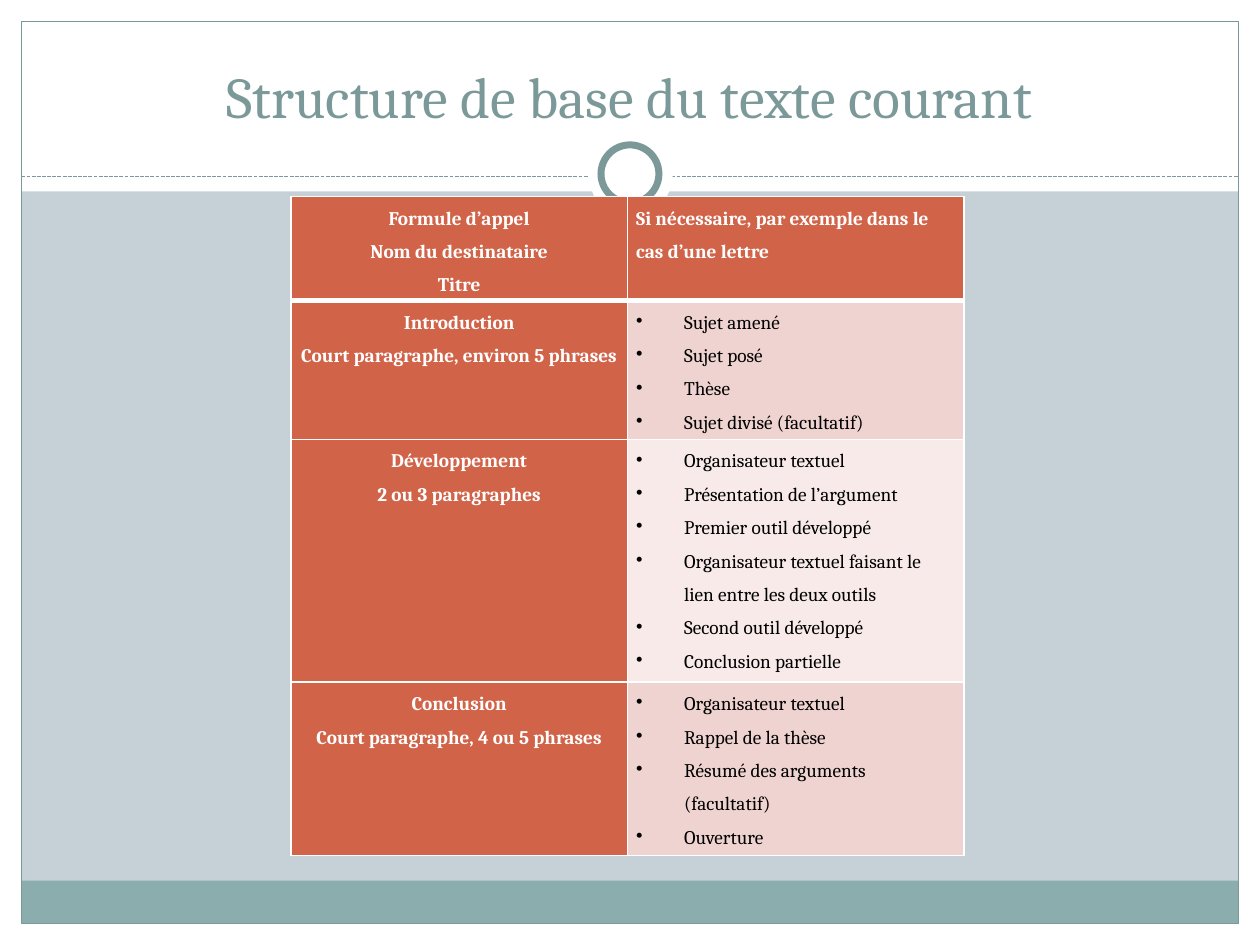
from lxml.etree import SubElement
from pptx import Presentation
from pptx.dml.color import RGBColor
from pptx.enum.dml import MSO_LINE
from pptx.enum.shapes import MSO_CONNECTOR, MSO_SHAPE
from pptx.enum.text import MSO_ANCHOR, PP_ALIGN
from pptx.oxml.ns import qn
from pptx.util import Inches, Pt

TITLE = "Structure de base du texte courant"
ROWS = [
    (0.79, ["Formule d’appel", "Nom du destinataire", "Titre"],
     ["Si nécessaire, par exemple dans le cas d’une lettre"]),
    (1.05, ["Introduction", "Court paragraphe, environ 5 phrases"],
     ["Sujet amené", "Sujet posé", "Thèse", "Sujet divisé (facultatif)"]),
    (1.84, ["Développement", "2 ou 3 paragraphes"],
     ["Organisateur textuel", "Présentation de l’argument", "Premier outil développé",
      "Organisateur textuel faisant le lien entre les deux outils",
      "Second outil développé", "Conclusion partielle"]),
    (1.32, ["Conclusion", "Court paragraphe, 4 ou 5 phrases"],
     ["Organisateur textuel", "Rappel de la thèse",
      "Résumé des arguments (facultatif)", "Ouverture"]),
]
WHITE, TEAL, BAR, BACK = "FFFFFF", "7C999A", "8CADAE", "C5D1D7"
ORANGE, BANDS = "D16349", ("F7EAE9", "EED3D0")
W, H, M = 10, 7.5, 0.17
COL_W = 2.67
PANELS = [
    (MSO_SHAPE.RECTANGLE, 0, H - M, W, M, WHITE, None, 0),
    (MSO_SHAPE.RECTANGLE, 0, 0, W, 1.52, WHITE, None, 0),
    (MSO_SHAPE.RECTANGLE, 0, 0, M, H, WHITE, None, 0),
    (MSO_SHAPE.RECTANGLE, W - M, 0, M, H, WHITE, None, 0),
    (MSO_SHAPE.RECTANGLE, M, 6.99, W - 2 * M, 0.34, BAR, None, 0),
    (MSO_SHAPE.RECTANGLE, M, M, W - 2 * M, H - 2 * M, None, TEAL, 0.75),
]
RINGS = [
    (MSO_SHAPE.OVAL, 4.67, 1.05, 0.67, 0.67, WHITE, None, 0),
    (MSO_SHAPE.OVAL, 4.77, 1.15, 0.46, 0.46, WHITE, TEAL, 4),
]


def rgb(color):
    return RGBColor.from_string(color)


def add_panel(shapes, kind, x, y, w, h, fill, line, width):
    sp = shapes.add_shape(kind, Inches(x), Inches(y), Inches(w), Inches(h))
    sp.shadow.inherit = False
    if fill:
        sp.fill.solid()
        sp.fill.fore_color.rgb = rgb(fill)
    else:
        sp.fill.background()
    if line:
        sp.line.color.rgb = rgb(line)
        sp.line.width = Pt(width)
    else:
        sp.line.fill.background()


def write(tf, lines, size=11, color=WHITE, bold=False, align=PP_ALIGN.CENTER,
          spacing=None, bullet=False):
    tf.word_wrap = True
    for i, text in enumerate(lines):
        p = tf.paragraphs[0] if i == 0 else tf.add_paragraph()
        p.alignment = align
        if spacing:
            p.line_spacing = spacing
        if bullet:
            pPr = p._p.get_or_add_pPr()
            pPr.set("marL", str(Inches(0.38)))
            pPr.set("indent", str(-Inches(0.38)))
            SubElement(pPr, qn("a:buChar")).set("char", "•")
        r = p.add_run()
        r.text = text
        r.font.name = "Cambria"
        r.font.size = Pt(size)
        r.font.bold = bold
        r.font.color.rgb = rgb(color)


def style_cell(cell, fill, bottom):
    cell.margin_left = cell.margin_right = Inches(0.07)
    cell.margin_top = cell.margin_bottom = 0
    tcPr = cell._tc.get_or_add_tcPr()
    for side, width in (("L", 1), ("R", 1), ("T", 1), ("B", bottom)):
        ln = SubElement(tcPr, qn("a:ln" + side), w=str(Pt(width)))
        solid = SubElement(ln, qn("a:solidFill"))
        SubElement(solid, qn("a:srgbClr")).set("val", WHITE)
    cell.fill.solid()
    cell.fill.fore_color.rgb = rgb(fill)


def add_rule(shapes, y):
    line = shapes.add_connector(MSO_CONNECTOR.STRAIGHT, Inches(M), Inches(y),
                                Inches(W - M), Inches(y))
    line.line.color.rgb = rgb(TEAL)
    line.line.width = Pt(0.75)
    line.line.dash_style = MSO_LINE.SQUARE_DOT
    SubElement(line._element.spPr, qn("a:effectLst"))


def add_structure_table(shapes):
    height = sum(row[0] for row in ROWS)
    table = shapes.add_table(len(ROWS), 2, Inches(2.31), Inches(1.56),
                             Inches(2 * COL_W), Inches(height)).table
    table.horz_banding = False
    for col in table.columns:
        col.width = Inches(COL_W)
    for i, (row_h, part, content) in enumerate(ROWS):
        header = i == 0
        table.rows[i].height = Inches(row_h)
        left, right = table.cell(i, 0), table.cell(i, 1)
        style_cell(left, ORANGE, 3 if header else 1)
        style_cell(right, ORANGE if header else BANDS[i % 2], 3 if header else 1)
        write(left.text_frame, part, bold=True, spacing=1.5)
        write(right.text_frame, content, color=WHITE if header else "000000",
              bold=header, align=PP_ALIGN.LEFT, spacing=1.5, bullet=not header)


def main():
    prs = Presentation()
    prs.slide_width, prs.slide_height = Inches(W), Inches(H)
    s = prs.slides.add_slide(prs.slide_layouts[6])
    s.background.fill.solid()
    s.background.fill.fore_color.rgb = rgb(BACK)
    for panel in PANELS:
        add_panel(s.shapes, *panel)
    add_rule(s.shapes, 1.4)
    for ring in RINGS:
        add_panel(s.shapes, *ring)
    title = s.shapes.add_textbox(Inches(0.33), Inches(0.25), Inches(9.33), Inches(0.83))
    title.text_frame.vertical_anchor = MSO_ANCHOR.BOTTOM
    write(title.text_frame, [TITLE], size=33, color=TEAL)
    add_structure_table(s.shapes)
    prs.save("out.pptx")


if __name__ == "__main__":
    main()
